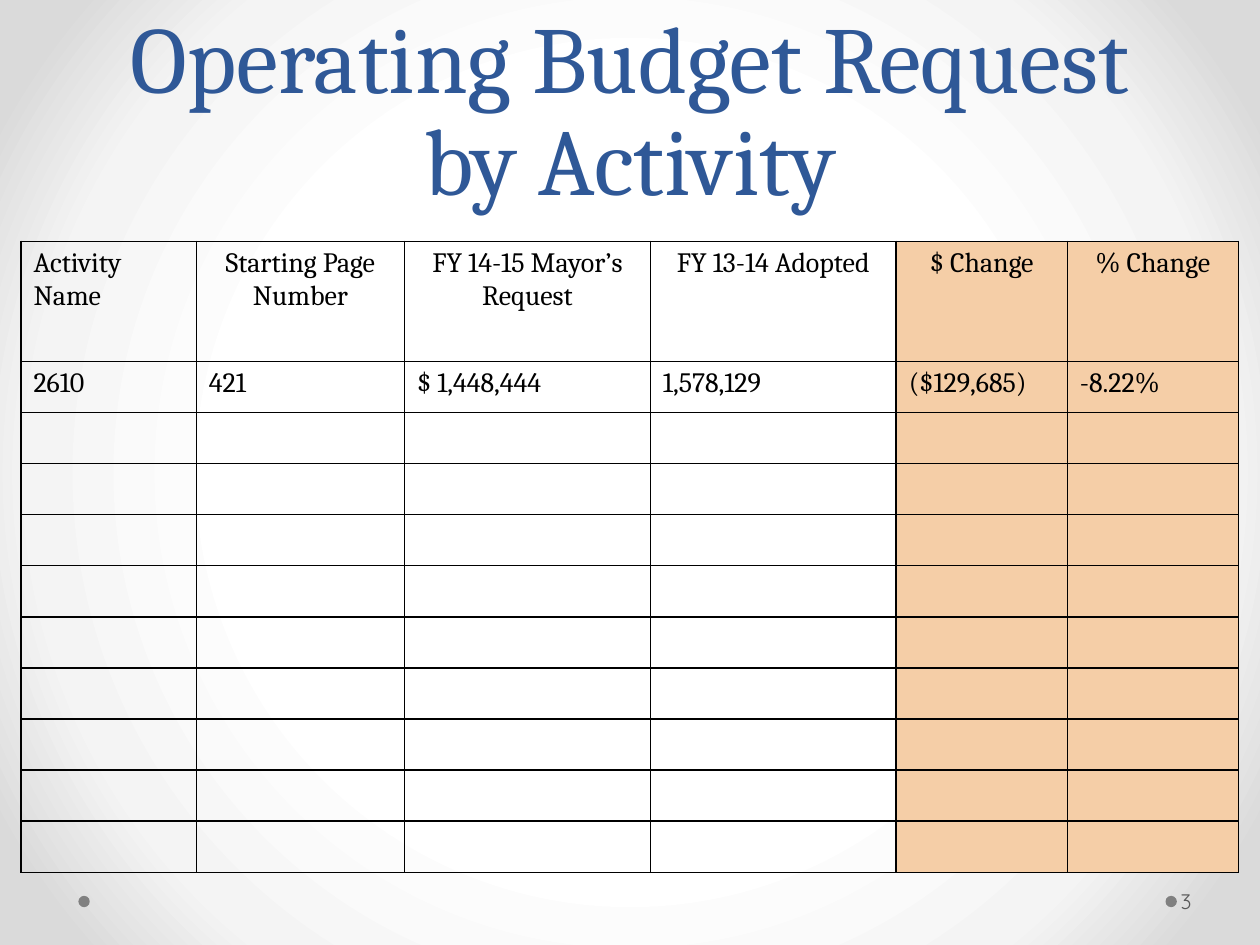
"""Build the operating budget request slide with its activity table."""
import pptx
import pptx.dml.color
import pptx.enum.shapes
import pptx.enum.text
import pptx.oxml
import pptx.oxml.ns
import pptx.util
from dataclasses import dataclass

Pt = pptx.util.Pt
RGB = pptx.dml.color.RGBColor.from_string
ALIGN = pptx.enum.text.PP_ALIGN
ANCHOR = pptx.enum.text.MSO_ANCHOR
NS = pptx.oxml.ns.nsdecls("a", "p")


@dataclass(frozen=True)
class Theme:
    title: str = "2F5897"
    text: str = "000000"
    number: str = "595959"
    dot: str = "808080"
    change: str = "F5CEA7"
    backdrop: tuple = ((50, "FFFFFF"), (76, "F4F4F4"), (92, "DADADA"))
    serif: str = "Cambria"
    sans: str = "Quicksand"
    title_size: int = 54
    table_size: int = 16
    number_size: int = 12


theme = Theme()


def add_run(p, text, size, font, color):
    r = p.add_run()
    r.text = text
    r.font.size = Pt(size)
    r.font.name = font
    r.font.color.rgb = RGB(color)


def add_box(left, top, width, height, anchor):
    tf = s.shapes.add_textbox(Pt(left), Pt(top), Pt(width), Pt(height)).text_frame
    tf.word_wrap = True
    tf.vertical_anchor = anchor
    return tf


prs = pptx.Presentation()
prs.slide_width, prs.slide_height = Pt(720), Pt(540)
s = prs.slides.add_slide(prs.slide_layouts[6])

stops = "".join(
    f'<a:gs pos="{pos * 1000}"><a:srgbClr val="{color}"/></a:gs>'
    for pos, color in theme.backdrop
)
s._element.cSld.insert(0, pptx.oxml.parse_xml(
    f'<p:bg {NS}><p:bgPr><a:gradFill rotWithShape="1"><a:gsLst>{stops}</a:gsLst>'
    '<a:path path="circle"><a:fillToRect l="50000" t="50000" r="50000" b="50000"/></a:path>'
    '</a:gradFill><a:effectLst/></p:bgPr></p:bg>'
))

for left in (666, 44.8):
    sp = s.shapes.add_shape(
        pptx.enum.shapes.MSO_SHAPE.OVAL, Pt(left), Pt(511.9), Pt(6.5), Pt(6.5)
    )
    sp.shadow.inherit = False
    sp.fill.solid()
    sp.fill.fore_color.rgb = RGB(theme.dot)
    sp.line.fill.background()

tf = add_box(36, 0, 648, 126, ANCHOR.BOTTOM)
p = tf.paragraphs[0]
p.alignment = ALIGN.CENTER
p.line_spacing = Pt(58)
add_run(p, "Operating Budget Request by Activity", theme.title_size, theme.serif, theme.title)

header = ["Activity Name", "Starting Page Number", "FY 14-15 Mayor’s Request",
          "FY 13-14 Adopted", "$ Change", "% Change"]
activity = ["2610", "421", "$ 1,448,444", "1,578,129", "($129,685)", "-8.22%"]
rows = [header, activity] + [[""] * len(header)] * 9
col_widths = [100.2, 119, 140.5, 140.5, 97.8, 97.8]
row_heights = [68.5] + [29.2] * 10

table = s.shapes.add_table(
    len(rows), len(header), Pt(12), Pt(138), Pt(sum(col_widths)), Pt(sum(row_heights))
).table
table.first_row = table.horz_banding = False
for column, width in zip(table.columns, col_widths):
    column.width = Pt(width)
for row, height in zip(table.rows, row_heights):
    row.height = Pt(height)

for i, values in enumerate(rows):
    for j, value in enumerate(values):
        cell = table.cell(i, j)
        if j >= 4:
            cell.fill.solid()
            cell.fill.fore_color.rgb = RGB(theme.change)
        else:
            cell.fill.background()
        p = cell.text_frame.paragraphs[0]
        if i == 0 and j > 0:
            p.alignment = ALIGN.CENTER
        if value:
            add_run(p, value, theme.table_size, theme.serif, theme.text)
        else:
            p._p.append(pptx.oxml.parse_xml(
                f'<a:endParaRPr {NS} sz="{theme.table_size * 100}"/>'
            ))
        for k, side in enumerate(("lnL", "lnR", "lnT", "lnB")):
            cell._tc.get_or_add_tcPr().insert(k, pptx.oxml.parse_xml(
                f'<a:{side} {NS} w="12700"><a:solidFill><a:srgbClr val="{theme.text}"/>'
                f'</a:solidFill></a:{side}>'
            ))

tf = add_box(672.5, 500.4, 44, 28.8, ANCHOR.MIDDLE)
tf.margin_left = Pt(2.2)
tf.margin_right = Pt(3.6)
add_run(tf.paragraphs[0], "3", theme.number_size, theme.sans, theme.number)

prs.save("out.pptx")
